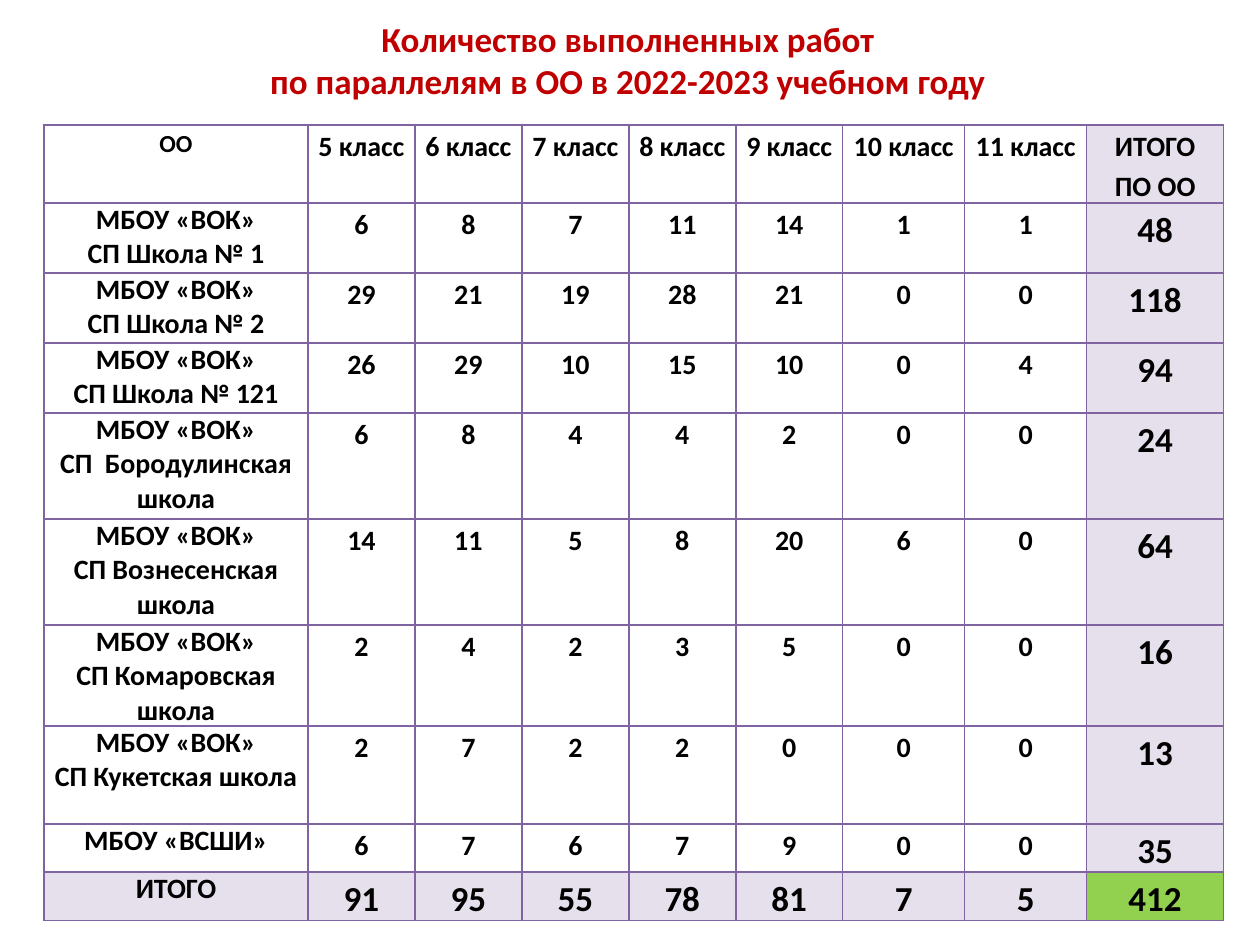
from lxml import etree
from pptx import Presentation
from pptx.dml.color import RGBColor
from pptx.enum.text import MSO_ANCHOR, PP_ALIGN
from pptx.oxml.ns import qn
from pptx.util import Pt

CENTER, MIDDLE = PP_ALIGN.CENTER, MSO_ANCHOR.MIDDLE
PX = 914400 // 126
FONT = "Calibri"
COLORS = {"title": "C00000", "text": "000000", "border": "8064A2",
          "total": "E6E0EC", "grand": "92D050"}

TITLE = "Количество выполненных работ\nпо параллелям в ОО в 2022-2023 учебном году"
HEADER = ["ОО", "5 класс", "6 класс", "7 класс", "8 класс", "9 класс",
          "10 класс", "11 класс", "ИТОГО ПО ОО"]
SCHOOLS = [
    ("МБОУ «ВОК»\nСП Школа № 1", 6, 8, 7, 11, 14, 1, 1, 48),
    ("МБОУ «ВОК»\nСП Школа № 2", 29, 21, 19, 28, 21, 0, 0, 118),
    ("МБОУ «ВОК»\nСП Школа № 121", 26, 29, 10, 15, 10, 0, 4, 94),
    ("МБОУ «ВОК»\nСП  Бородулинская школа", 6, 8, 4, 4, 2, 0, 0, 24),
    ("МБОУ «ВОК»\nСП Вознесенская школа", 14, 11, 5, 8, 20, 6, 0, 64),
    ("МБОУ «ВОК»\nСП Комаровская школа", 2, 4, 2, 3, 5, 0, 0, 16),
    ("МБОУ «ВОК»\nСП Кукетская школа", 2, 7, 2, 2, 0, 0, 0, 13),
    ("МБОУ «ВСШИ»", 6, 7, 6, 7, 9, 0, 0, 35),
]
TOTALS = ("ИТОГО", 91, 95, 55, 78, 81, 7, 5, 412)
ROWS = [HEADER, *SCHOOLS, TOTALS]
COL_WIDTHS = [264] + [107] * 5 + [122, 122, 137]
ROW_HEIGHTS = [78, 70, 70, 70, 106, 106, 101, 98, 48, 48]
LAST_ROW, LAST_COL = len(ROWS) - 1, len(HEADER) - 1


def write(tf, text, size, color, spacing=None):
    tf.text = text
    for p in tf.paragraphs:
        p.alignment = CENTER
        if spacing:
            p.line_spacing = spacing
        for r in p.runs:
            r.font.name, r.font.size, r.font.bold = FONT, Pt(size), True
            r.font.color.rgb = RGBColor.from_string(COLORS[color])


def add_borders(cell):
    """Put the four side lines before the fill, as the schema orders them."""
    tcPr = cell._tc.get_or_add_tcPr()
    for i, side in enumerate(("a:lnL", "a:lnR", "a:lnT", "a:lnB")):
        ln = etree.Element(qn(side), w=str(Pt(1)))
        fill = etree.SubElement(ln, qn("a:solidFill"))
        etree.SubElement(fill, qn("a:srgbClr"), val=COLORS["border"])
        tcPr.insert(i, ln)


def text_size(row, col):
    if row == col == 0:
        return 14
    is_total = (col == LAST_COL and row > 0) or (row == LAST_ROW and col > 0)
    return 20 if is_total else 16


def fill_cell(cell, row, col):
    if row == LAST_ROW and col == LAST_COL:
        fill = "grand"
    elif row == LAST_ROW or col == LAST_COL:
        fill = "total"
    else:
        fill = None
    if fill:
        cell.fill.solid()
        cell.fill.fore_color.rgb = RGBColor.from_string(COLORS[fill])
    else:
        cell.fill.background()


prs = Presentation()
prs.slide_width, prs.slide_height = 1260 * PX, 945 * PX
s = prs.slides.add_slide(prs.slide_layouts[6])

title = s.shapes.add_textbox(29 * PX, 10 * PX, 1198 * PX, 136 * PX)
tf = title.text_frame
tf.word_wrap = True
tf.vertical_anchor = MIDDLE
tf.margin_bottom = 44 * PX
write(tf, TITLE, 20, "title")

table = s.shapes.add_table(len(ROWS), len(HEADER), 44 * PX, 125 * PX,
                           sum(COL_WIDTHS) * PX, sum(ROW_HEIGHTS) * PX).table
table.first_row = table.horz_banding = False
for column, width in zip(table.columns, COL_WIDTHS):
    column.width = width * PX
for table_row, height in zip(table.rows, ROW_HEIGHTS):
    table_row.height = height * PX

for row, values in enumerate(ROWS):
    for col, value in enumerate(values):
        cell = table.cell(row, col)
        cell.margin_left = cell.margin_right = 8 * PX
        cell.margin_top = cell.margin_bottom = 0
        is_name = col == 0 and row > 0
        write(cell.text_frame, str(value), text_size(row, col), "text",
              None if is_name else 1.15)
        fill_cell(cell, row, col)
        add_borders(cell)

prs.save("out.pptx")
